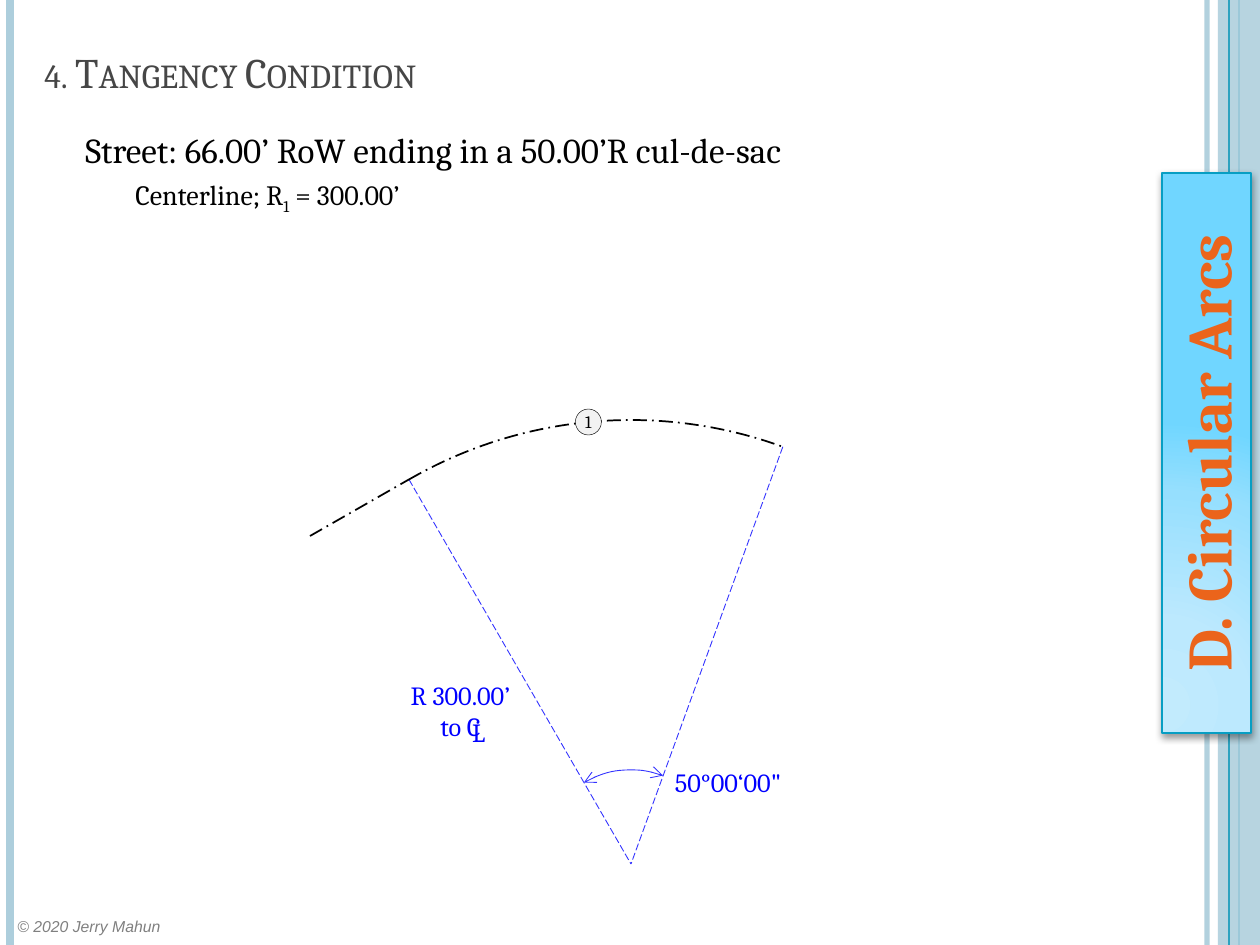
from collections import namedtuple
from dataclasses import dataclass
from math import cos, radians, sin

from pptx import Presentation
from pptx.dml.color import RGBColor as Rgb
from pptx.enum.dml import MSO_LINE as Dash
from pptx.enum.shapes import MSO_CONNECTOR as Connector, MSO_SHAPE as Preset
from pptx.enum.text import MSO_ANCHOR as Anchor, PP_ALIGN as Align
from pptx.oxml import parse_xml
from pptx.oxml.ns import nsdecls, qn
from pptx.util import Emu, Pt

Box = namedtuple("Box", "left top width height")


@dataclass(frozen=True)
class Theme:
    """Colours, fonts and type sizes of the slide."""
    serif: str = "Cambria"
    sans: str = "Arial"
    rail: str = "ADCEDC"
    accent: str = "2DA2BF"
    tab_edge: str = "079EC3"
    tab_text: str = "EB641B"
    tab_stops: tuple = ((0, "C2EBFD"), (30, "BCE9FE"), (75, "96DFFE"), (100, "70D6FF"))
    title: str = "464646"
    ink: str = "000000"
    muted: str = "808080"
    label: str = "0000FF"
    radius: str = "3333FF"
    badge: str = "F2F2F2"
    tab_size: int = 36
    title_size: int = 24
    body_size: int = 20
    detail_size: int = 16
    label_size: int = 15
    badge_size: int = 10
    footer_size: int = 9


THEME = Theme()


def px(length):
    """Turn pixels into EMU at 126 pixels to the inch."""
    return Emu(round(length * 914400 / 126))


def scaled(box):
    """Turn a pixel box into EMU lengths."""
    return [px(length) for length in box]


def set_alpha(parent, percent):
    """Make the solid colour inside an XML element translucent."""
    colour = next(parent.iter(qn("a:srgbClr")))
    colour.append(parse_xml(f'<a:alpha {nsdecls("a")} val="{percent * 1000}"/>'))


def style_line(shape, colour, width, dash=None):
    """Give an outline its colour, width and dash."""
    shape.line.color.rgb = Rgb.from_string(colour)
    shape.line.width = Pt(width)
    if dash:
        shape.line.dash_style = dash


def add_line(page, start, end, colour, width, dash=None):
    """Draw a straight line without a shadow."""
    line = page.shapes.add_connector(Connector.STRAIGHT, *scaled((*start, *end)))
    style_line(line, colour, width, dash)
    properties = line._element.spPr
    properties.append(parse_xml(f'<a:effectLst {nsdecls("a")}/>'))
    return line


def add_preset(page, kind, box):
    """Add a preset shape without a shadow."""
    shape = page.shapes.add_shape(kind, *scaled(box))
    shape.shadow.inherit = False
    return shape


def add_span(para, text, size, colour, font=THEME.serif):
    """Add one formatted run to a paragraph."""
    span = para.add_run()
    span.text = text
    span.font.name = font
    span.font.size = Pt(size)
    span.font.color.rgb = Rgb.from_string(colour)
    return span


def add_text_box(page, box, inset=True):
    """Add a wrapping text box and return its frame."""
    frame = page.shapes.add_textbox(*scaled(box)).text_frame
    frame.word_wrap = True
    if not inset:
        clear_insets(frame)
    return frame


def clear_insets(frame):
    """Remove the inner margins of a text frame."""
    frame.margin_left = frame.margin_right = frame.margin_top = frame.margin_bottom = 0


def add_rails(page, box):
    """Draw the vertical bands on both edges of the page."""
    def rail(offset, colour, width):
        x = box.left + offset
        return add_line(page, (x, box.top), (x, box.top + box.height), colour, width)

    set_alpha(rail(1207, THEME.rail, 3)._element.spPr, 93)
    rail(10, THEME.rail, 4.5)
    rail(1239, THEME.accent, 1.5)
    band = add_preset(page, Preset.RECTANGLE, Box(box.left + 1218, box.top, 42, box.height))
    band.fill.solid()
    band.fill.fore_color.rgb = Rgb.from_string(THEME.rail)
    set_alpha(band._element.spPr, 87)
    band.line.fill.background()
    rail(1229, THEME.accent, 0.75)


def add_footer(page, box):
    """Write the copyright line."""
    para = add_text_box(page, box).paragraphs[0]
    add_span(para, "© 2020 Jerry Mahun", THEME.footer_size, THEME.muted, THEME.sans).font.italic = True


def add_section_tab(page, box):
    """Draw the section tab, turned to read upwards inside its box."""
    shift = (box.height - box.width) / 2
    flat = Box(box.left - shift, box.top + shift, box.height, box.width)
    tab = add_preset(page, Preset.RECTANGLE, flat)
    tab.rotation = 270
    style_line(tab, THEME.tab_edge, 1)
    stops = "".join(f'<a:gs pos="{place * 1000}"><a:srgbClr val="{colour}"/></a:gs>'
                    for place, colour in THEME.tab_stops)
    properties = tab._element.spPr
    properties.find(qn("a:prstGeom")).addnext(parse_xml(
        f'<a:gradFill {nsdecls("a")} rotWithShape="1"><a:gsLst>{stops}</a:gsLst><a:path path="circle">'
        '<a:fillToRect l="5000" t="100000" r="120000" b="10000"/></a:path></a:gradFill>'))
    shadow = parse_xml(
        f'<a:outerShdw {nsdecls("a")} blurRad="{Pt(4)}" dist="{Pt(2)}" dir="5400000" rotWithShape="0">'
        f'<a:srgbClr val="{THEME.ink}"/></a:outerShdw>')
    set_alpha(shadow, 40)
    properties.find(qn("a:effectLst")).append(shadow)
    frame = tab.text_frame
    frame.word_wrap = False
    frame.vertical_anchor = Anchor.MIDDLE
    para = frame.paragraphs[0]
    para.alignment = Align.CENTER
    add_span(para, "D. Circular Arcs", THEME.tab_size, THEME.tab_text).font.bold = True


def add_title(page, box):
    """Write the title in small capitals."""
    frame = add_text_box(page, box)
    frame.vertical_anchor = Anchor.BOTTOM
    span = add_span(frame.paragraphs[0], "4. Tangency Condition", THEME.title_size, THEME.title)
    span.font._element.set("cap", "small")


def add_body(page, box):
    """Write the street description and its indented detail."""
    frame = add_text_box(page, box)
    para = frame.paragraphs[0]
    para.space_before = Pt(6)
    add_span(para, "Street: 66.00’ RoW ending in a 50.00’R cul-de-sac", THEME.body_size, THEME.ink)
    detail = frame.add_paragraph()
    detail.space_before = Pt(4)
    detail._p.get_or_add_pPr().set("marL", str(px(50)))
    for text, baseline in (("Centerline; R", 0), ("1", -25000), (" = 300.00’", 0)):
        span = add_span(detail, text, THEME.detail_size, THEME.ink)
        if baseline:
            span.font._element.set("baseline", str(baseline))


def add_curve_diagram(page, box):
    """Draw the centerline curve with its radii, angle and labels."""
    apex = (box.left + 321, box.top + 452)
    radius, start, end = 444, 240, 290

    def on_circle(angle):
        turn = radians(angle)
        return apex[0] + radius * cos(turn), apex[1] + radius * sin(turn)

    def around(centre, reach):
        return Box(centre[0] - reach, centre[1] - reach, 2 * reach, 2 * reach)

    def arc(reach, colour, width, dash=None):
        shape = add_preset(page, Preset.ARC, around(apex, reach))
        shape.fill.background()
        shape.adjustments[0], shape.adjustments[1] = start * 0.6, end * 0.6
        style_line(shape, colour, width, dash)
        return shape

    def label(offset, size, lines, align=Align.LEFT):
        place = Box(box.left + offset[0], box.top + offset[1], *size)
        para = add_text_box(page, place, inset=False).paragraphs[0]
        para.alignment = align
        for number, text in enumerate(lines):
            if number:
                para.add_line_break()
            add_span(para, text, THEME.label_size, THEME.label)

    label((94, 267), (113, 63), ("R 300.00’", "to C"), Align.CENTER)
    label((162, 304), (18, 32), ("L",))
    label((365, 354), (115, 32), ("50°00‘00\"",))
    for angle in (end, start):
        add_line(page, on_circle(angle), apex, THEME.radius, 0.5, Dash.LONG_DASH)
    arc(radius, THEME.ink, 1, Dash.LONG_DASH_DOT)
    add_line(page, (box.left, box.top + 124), on_circle(start), THEME.ink, 1, Dash.LONG_DASH_DOT)
    outline = arc(94, THEME.radius, 0.5).line._get_or_add_ln()
    for tip in ("headEnd", "tailEnd"):
        outline.append(parse_xml(f'<a:{tip} {nsdecls("a")} type="arrow"/>'))
    badge = add_preset(page, Preset.OVAL, around(on_circle(264.5), 13))
    badge.fill.solid()
    badge.fill.fore_color.rgb = Rgb.from_string(THEME.badge)
    style_line(badge, THEME.ink, 0.25)
    frame = badge.text_frame
    clear_insets(frame)
    frame.vertical_anchor = Anchor.MIDDLE
    frame.paragraphs[0].alignment = Align.CENTER
    add_span(frame.paragraphs[0], "1", THEME.badge_size, THEME.ink)


def main():
    """Build the slide and save the deck."""
    deck = Presentation()
    deck.slide_width, deck.slide_height = px(1260), px(945)
    page = deck.slides.add_slide(deck.slide_layouts[6])
    add_rails(page, Box(0, 0, 1260, 945))
    add_footer(page, Box(5, 911, 181, 32))
    add_section_tab(page, Box(1162, 173, 89, 560))
    add_body(page, Box(73, 122, 1018, 770))
    add_title(page, Box(32, 38, 1061, 65))
    add_curve_diagram(page, Box(310, 412, 480, 452))
    deck.save("out.pptx")


if __name__ == "__main__":
    main()
